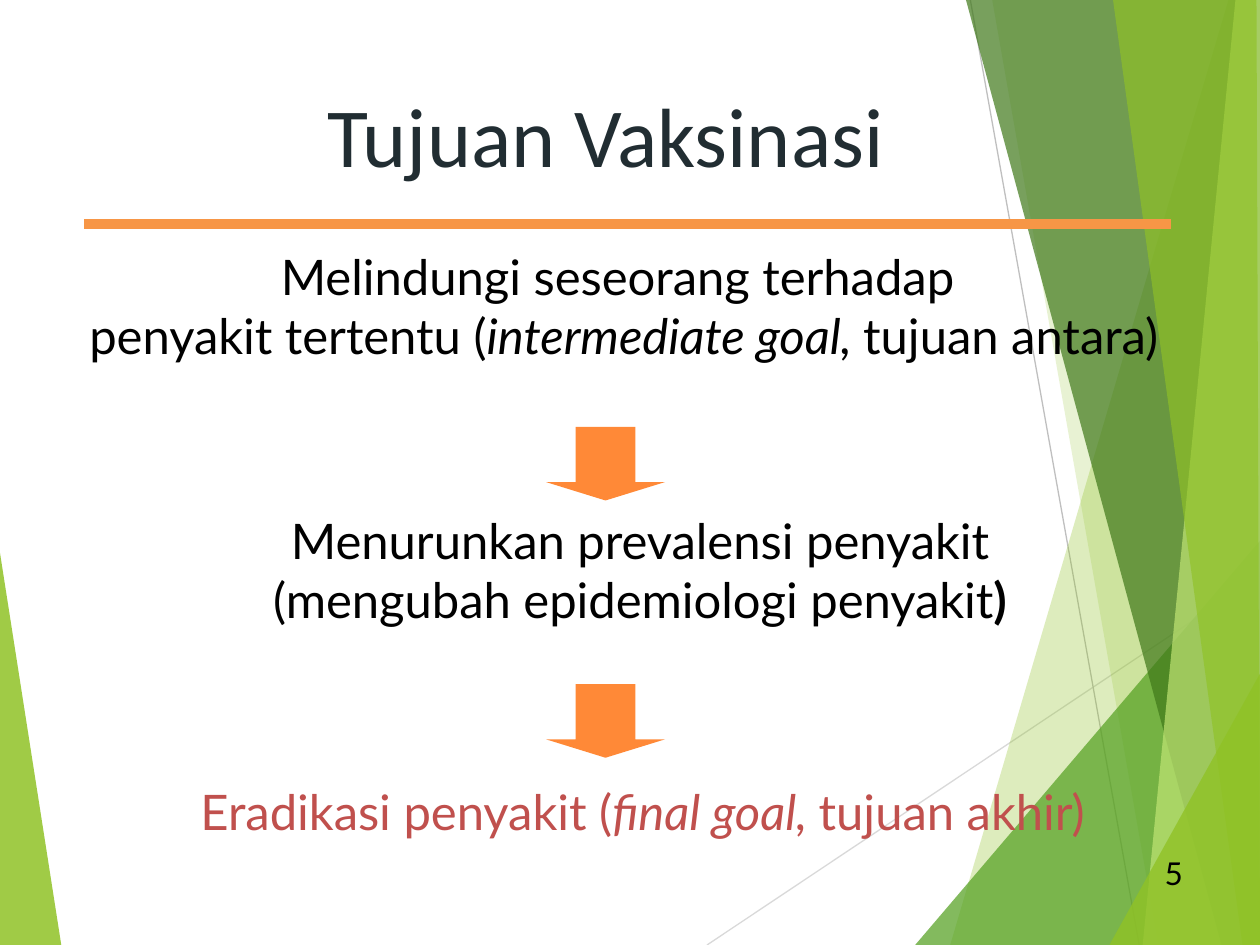
import lxml.etree
import pptx
import pptx.util
import pptx.dml.color
import pptx.enum.shapes
import pptx.enum.text
import pptx.oxml.ns

Pt = pptx.util.Pt
qn = pptx.oxml.ns.qn
ALIGN = pptx.enum.text.PP_ALIGN
ANCHOR = pptx.enum.text.MSO_ANCHOR
AUTO = pptx.enum.text.MSO_AUTO_SIZE


def color(value):
    return pptx.dml.color.RGBColor.from_string(value)


def write(sp, lines, size=28, font="Lato", fill="000000", align=ALIGN.CENTER,
          wrap=True, fit=AUTO.NONE, anchor=ANCHOR.TOP, before=0):
    tf = sp.text_frame
    tf.word_wrap = wrap
    tf.auto_size = fit
    tf.vertical_anchor = anchor
    for i, line in enumerate(lines):
        p = tf.add_paragraph() if i else tf.paragraphs[0]
        p.alignment = align
        p.space_before = Pt(before)
        for text, style in line:
            r = p.add_run()
            r.text = text
            r.font.name = font
            r.font.size = Pt(size)
            r.font.color.rgb = color(fill)
            r.font.italic = style == "i"
            r.font.bold = style == "b"


prs = pptx.Presentation()
prs.slide_width, prs.slide_height = Pt(720), Pt(540)
s = prs.slides.add_slide(prs.slide_layouts[5])
shapes = s.shapes

lines = [
    (404, 540, 720, 329, "D9D9D9", 0.75),
    (554.5, 0, 651, 540, "BFBFBF", 0.75),
    (669, 128, 48, 128, "F79646", 6),
]
facets = [
    ([(0, 316), (35, 540), (0, 540)], "90C226", 85),
    ([(702, 0), (543, 540), (720, 540), (720, 0)], "90C226", 30),
    ([(567, 0), (662, 540), (720, 540), (720, 0)], "90C226", 20),
    ([(523, 540), (720, 309), (720, 540)], "54A021", 72),
    ([(552, 0), (698, 540), (720, 540), (720, 0)], "3F7819", 70),
    ([(706, 0), (653, 540), (720, 540), (720, 0)], "C0E474", 70),
    ([(636, 0), (710, 540), (720, 540), (718.5, 0)], "90C226", 65),
    ([(634, 540), (720, 385), (720, 540)], "90C226", 80),
]

backdrop = facets[:1] + lines[:2] + facets[1:]
for item in backdrop + lines[2:]:
    if len(item) == 6:
        x1, y1, x2, y2, fill, width = item
        sp = shapes.add_connector(pptx.enum.shapes.MSO_CONNECTOR.STRAIGHT,
                                  Pt(x1), Pt(y1), Pt(x2), Pt(y2))
        sp.line.color.rgb = color(fill)
        sp.line.width = Pt(width)
        lxml.etree.SubElement(sp.element.spPr, qn("a:effectLst"))
    else:
        points, fill, opacity = item
        builder = shapes.build_freeform(*points[0], scale=Pt(1))
        builder.add_line_segments(points[1:], close=True)
        sp = builder.convert_to_shape()
        sp.shadow.inherit = False
        sp.line.fill.background()
        sp.fill.solid()
        sp.fill.fore_color.rgb = color(fill)
        clr = sp.element.spPr.find(".//" + qn("a:srgbClr"))
        lxml.etree.SubElement(clr, qn("a:alpha"), val=str(opacity * 1000))

title = shapes.title
title.left, title.top, title.width, title.height = Pt(58), Pt(44), Pt(576), Pt(65)
write(title, [[("Tujuan Vaksinasi", "")]], size=48, font="Calibri",
      fill="212D32", anchor=ANCHOR.MIDDLE)
shapes.element.append(title.element)

sp = shapes.add_textbox(Pt(30), Pt(137.5), Pt(653), Pt(109))
write(sp, [[("Melindungi seseorang terhadap ", "")],
           [("penyakit tertentu (", ""), ("intermediate goal, ", "i"),
            ("tujuan antara)", "")]])

sp = shapes.add_textbox(Pt(144), Pt(288), Pt(443.5), Pt(74))
write(sp, [[("Menurunkan prevalensi penyakit", "")],
           [("(mengubah epidemiologi penyakit", ""), (")", "b")]],
      wrap=False, fit=AUTO.SHAPE_TO_FIT_TEXT)

sp = shapes.add_textbox(Pt(107.5), Pt(443), Pt(546), Pt(41))
write(sp, [[("Eradikasi penyakit (", ""), ("final goal, ", "i"),
            ("tujuan akhir)", "")]],
      fill="C0504D", align=ALIGN.LEFT, wrap=False,
      fit=AUTO.SHAPE_TO_FIT_TEXT, before=5.6)

for top in (244, 391):
    sp = shapes.add_shape(pptx.enum.shapes.MSO_SHAPE.DOWN_ARROW,
                          Pt(312), Pt(top), Pt(68), Pt(42))
    sp.adjustments[0], sp.adjustments[1] = 0.5, 0.25
    sp.shadow.inherit = False
    sp.fill.solid()
    sp.fill.fore_color.rgb = color("FF8937")
    sp.line.fill.background()

sp = shapes.add_textbox(Pt(643), Pt(484.5), Pt(40), Pt(29))
write(sp, [[("5", "")]], size=18, align=ALIGN.RIGHT, anchor=ANCHOR.MIDDLE)

prs.save("out.pptx")
